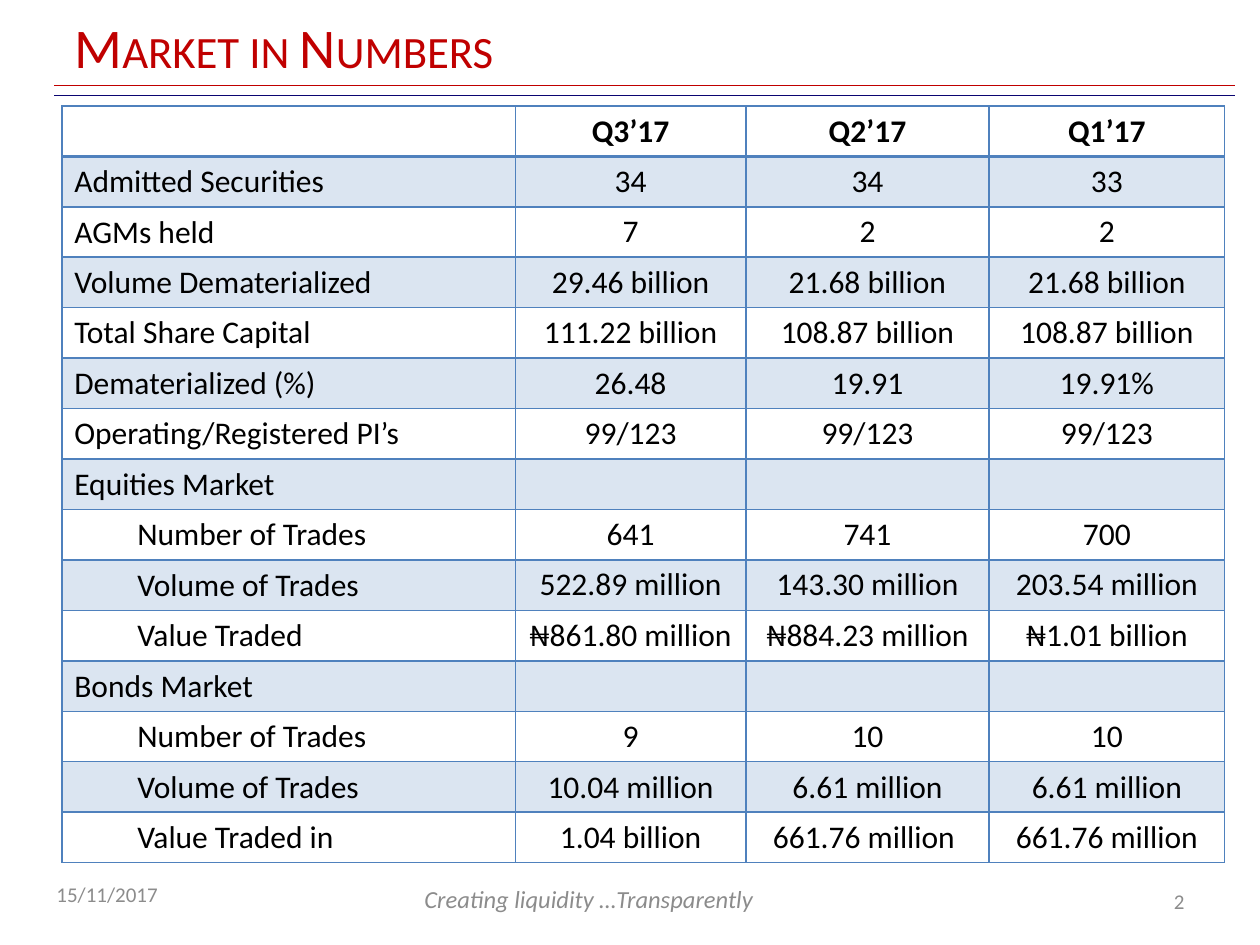
from lxml.etree import SubElement
from pptx import Presentation
from pptx.dml.color import RGBColor
from pptx.enum.shapes import MSO_CONNECTOR
from pptx.enum.text import MSO_ANCHOR, MSO_AUTO_SIZE, PP_ALIGN
from pptx.oxml.ns import qn
from pptx.util import Inches, Pt

RED = RGBColor(0xC0, 0x00, 0x00)
NAVY = RGBColor(0x0A, 0x05, 0x71)
BLUE = RGBColor(0x4F, 0x81, 0xBD)
GREY = RGBColor(0x8C, 0x8C, 0x8C)
BLACK = RGBColor(0x00, 0x00, 0x00)

HEAD = ["", "Q3’17", "Q2’17", "Q1’17"]
TRADES, VOLUME = "Number of Trades", "Volume of Trades"
# Indent level, label, then one value per quarter
ROWS = [
    (0, "Admitted Securities", "34", "34", "33"),
    (0, "AGMs held", "7", "2", "2"),
    (0, "Volume Dematerialized", "29.46 billion", "21.68 billion", "21.68 billion"),
    (0, "Total Share Capital", "111.22 billion", "108.87 billion", "108.87 billion"),
    (0, "Dematerialized (%)", "26.48", "19.91", "19.91%"),
    (0, "Operating/Registered PI’s", "99/123", "99/123", "99/123"),
    (0, "Equities Market", "", "", ""),
    (1, TRADES, "641", "741", "700"),
    (1, VOLUME, "522.89 million", "143.30 million", "203.54 million"),
    (1, "Value Traded", "₦861.80 million", "₦884.23 million", "₦1.01 billion"),
    (0, "Bonds Market", "", "", ""),
    (1, TRADES, "9", "10", "10"),
    (1, VOLUME, "10.04 million", "6.61 million", "6.61 million"),
    (1, "Value Traded in", "1.04 billion", "661.76 million ", "661.76 million"),
]
BONDS = 11  # table row where the bonds block starts


class Deck:
    """Holds the style and the current slide; lengths are cells of a 100 by 75 grid."""

    face = "Calibri"
    cols, rows = 100, 75

    def __init__(self):
        self.prs = Presentation()
        self.prs.slide_width, self.prs.slide_height = Inches(10), Inches(7.5)
        self.slide = self.prs.slides.add_slide(self.prs.slide_layouts[5])

    def x(self, n):
        return round(self.prs.slide_width * n / self.cols)

    def y(self, n):
        return round(self.prs.slide_height * n / self.rows)

    def box(self, left, top, width, height):
        return self.x(left), self.y(top), self.x(width), self.y(height)

    def style(self, para, size, color, bold=False, italic=False, align=PP_ALIGN.LEFT):
        para.alignment = align
        font = para.font
        font.name, font.size = self.face, Pt(size)
        font.bold, font.italic = bold, italic
        font.color.rgb = color

    def title(self, text, *place):
        shape = self.slide.shapes.title
        shape.left, shape.top, shape.width, shape.height = self.box(*place)
        frame = shape.text_frame
        frame.text = text
        frame.auto_size = MSO_AUTO_SIZE.NONE
        frame.vertical_anchor = MSO_ANCHOR.MIDDLE
        para = frame.paragraphs[0]
        self.style(para, 32, RED)
        para.runs[0].font._element.set("cap", "small")

    def rule(self, left, right, top, color):
        line = self.slide.shapes.add_connector(
            MSO_CONNECTOR.STRAIGHT, self.x(left), self.y(top), self.x(right), self.y(top))
        line.line.color.rgb, line.line.width = color, Pt(0.75)
        SubElement(line._element.spPr, qn("a:effectLst"))

    def note(self, text, *place, size=12, anchor=MSO_ANCHOR.MIDDLE, **look):
        frame = self.slide.shapes.add_textbox(*self.box(*place)).text_frame
        frame.word_wrap = True
        frame.vertical_anchor = anchor
        frame.text = text
        self.style(frame.paragraphs[0], size, GREY, **look)

    def border(self, cell, **widths):
        props = cell._tc.get_or_add_tcPr()
        for side in "LRTB":
            width = Pt(widths.get(side, 1))
            line = SubElement(props, qn(f"a:ln{side}"), w=str(width))
            fill = SubElement(line, qn("a:solidFill"))
            SubElement(fill, qn("a:srgbClr"), val=str(BLUE))

    def tint(self, cell):
        cell.fill.solid()
        cell.fill.fore_color.rgb = BLUE
        color = cell._tc.tcPr.find(qn("a:solidFill")).find(qn("a:srgbClr"))
        SubElement(color, qn("a:alpha"), val="20000")

    def cell(self, cell, text, row, col, level):
        edge = {0: {"B": 2}, 1: {"T": 2}}.get(row, {})
        self.border(cell, **edge)
        if row % 2:
            self.tint(cell)
        else:
            cell.fill.background()
        if col and 0 < row < BONDS:
            cell.vertical_anchor = MSO_ANCHOR.MIDDLE
            cell.margin_left = cell.margin_right = 0
            cell.margin_top = cell.margin_bottom = 0
        cell.text = text
        para = cell.text_frame.paragraphs[0]
        if level and not col:
            para.level = level
            para._p.get_or_add_pPr().set("marL", str(Inches(0.5)))
        align = PP_ALIGN.CENTER if col else PP_ALIGN.LEFT
        self.style(para, 18, BLACK, bold=row == 0, align=align)

    def table(self, left, top, widths, height, data):
        place = self.box(left, top, sum(widths), height * len(data))
        table = self.slide.shapes.add_table(len(data), len(widths), *place).table
        table.first_row = table.horz_banding = False
        for col, width in zip(table.columns, widths):
            col.width = self.x(width)
        for r, (level, *texts) in enumerate(data):
            table.rows[r].height = self.y(height)
            for c, text in enumerate(texts):
                self.cell(table.cell(r, c), text, r, c, level)


def main():
    deck = Deck()
    deck.rule(4.3, 98, 7.6, NAVY)
    deck.rule(4.3, 98, 6.8, RED)
    deck.note("Creating liquidity …Transparently", 32.7, 69.7, 31.7, 4,
              size=14, anchor=MSO_ANCHOR.TOP, italic=True)
    deck.note("15/11/2017", 3.5, 69, 23.3, 4)
    deck.title("Market in Numbers", 4.9, 0.6, 79.6, 6.1)
    deck.note("2", 71.7, 69.5, 23.3, 4, align=PP_ALIGN.RIGHT)
    deck.table(4.9, 8.4, [36, 18.3, 19.3, 18.7], 4, [(0, *HEAD), *ROWS])
    deck.prs.save("out.pptx")


if __name__ == "__main__":
    main()
